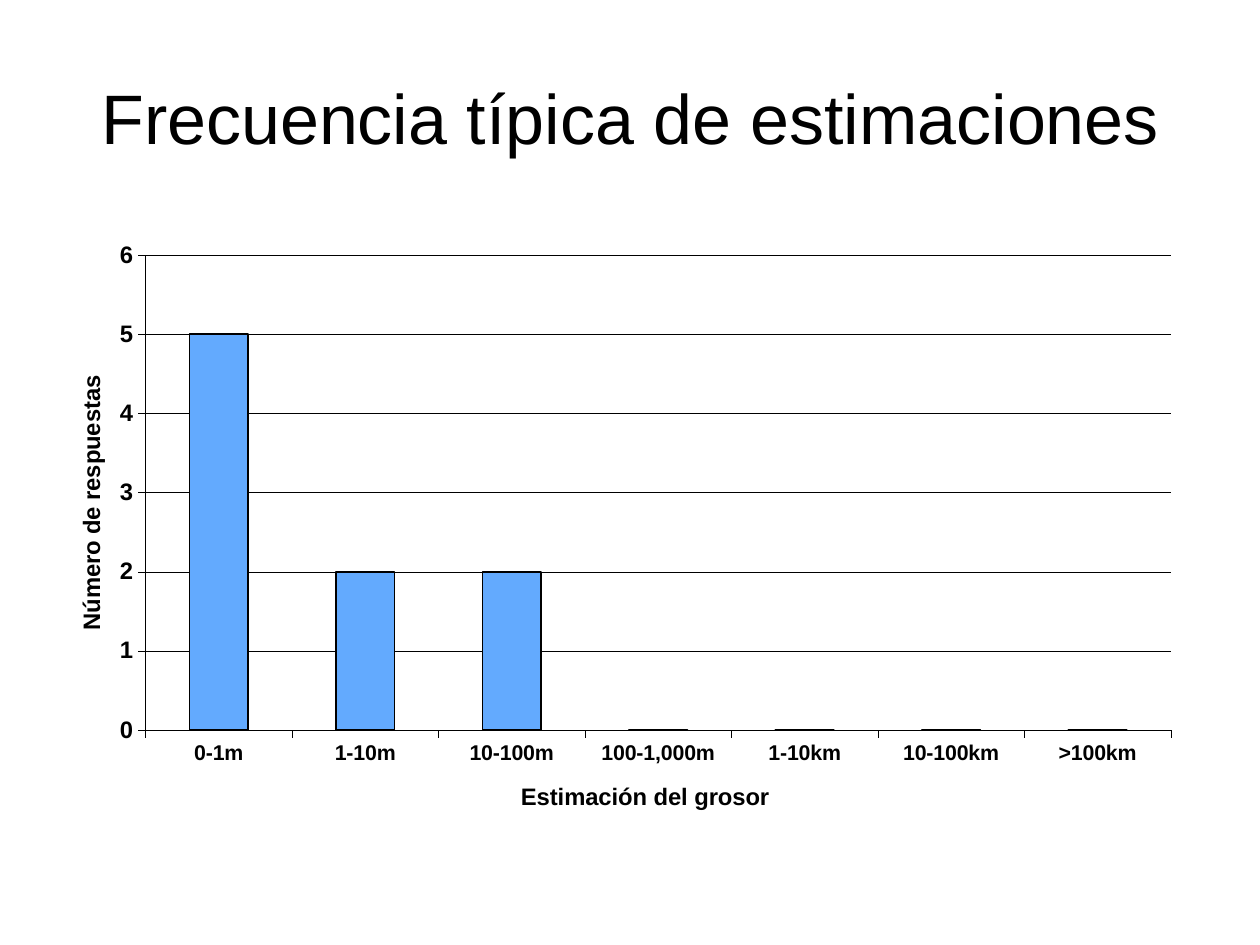
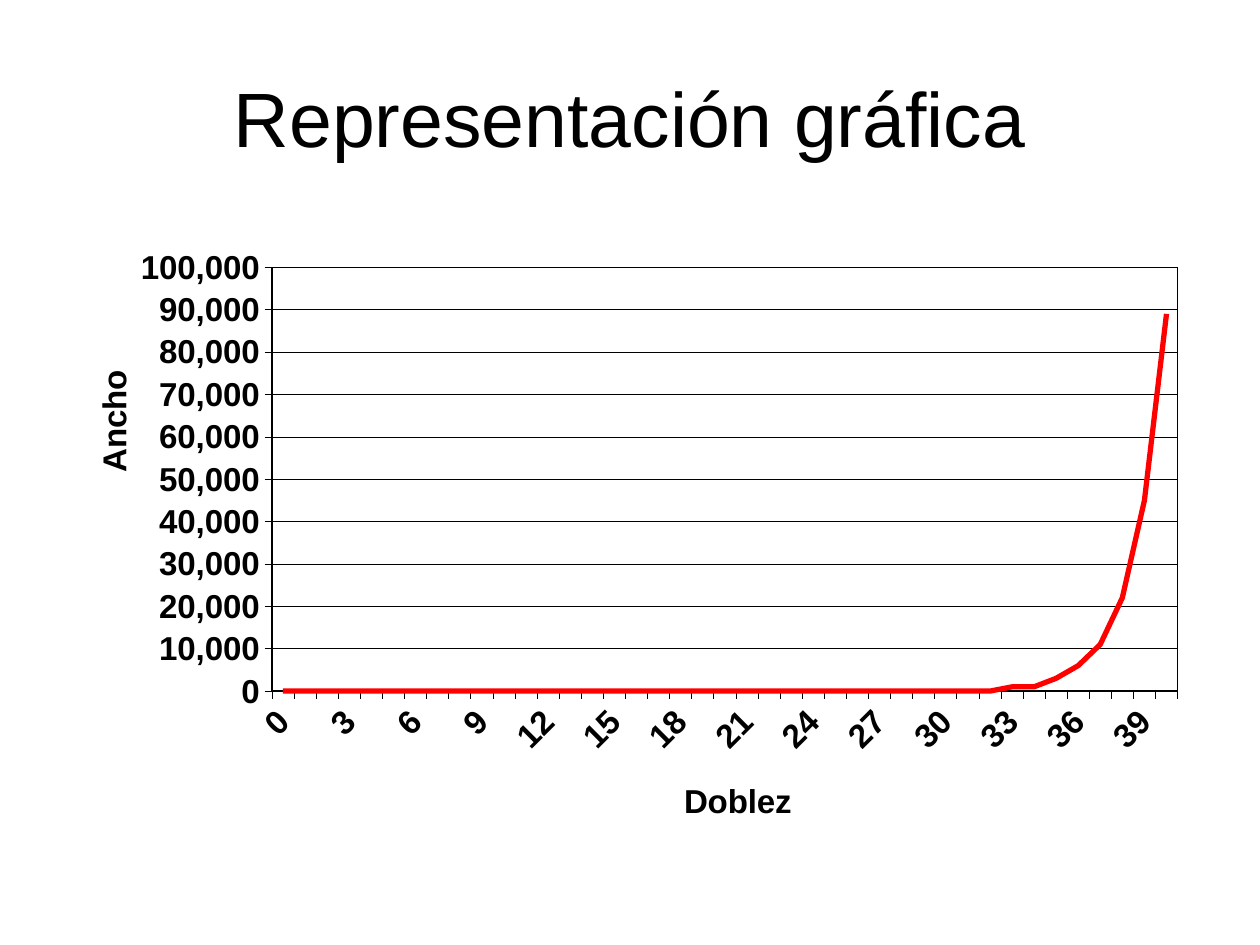
from lxml.etree import SubElement
from pptx import Presentation
from pptx.chart.data import CategoryChartData
from pptx.dml.color import RGBColor
from pptx.enum.chart import XL_CHART_TYPE, XL_TICK_LABEL_POSITION, XL_TICK_MARK
from pptx.enum.text import MSO_ANCHOR, PP_ALIGN
from pptx.oxml import parse_xml
from pptx.oxml.ns import nsdecls, qn
from pptx.util import Pt

FONT = "Arial"
BLACK = "000000"


def paint(target, color, width=None):
    """Colour a font or fill, or a line when a width is given."""
    if width is not None:
        target.width = Pt(width)
        target = target.fill
    if hasattr(target, "solid"):
        target.solid()
        target.fore_color.rgb = RGBColor.from_string(color)
    else:
        target.color.rgb = RGBColor.from_string(color)


def place(parent, **percents):
    """Give a plot area or axis title a manual layout, in percent of the chart."""
    for old in parent.findall(qn("c:layout")):
        parent.remove(old)
    layout = parse_xml(f"<c:layout {nsdecls('c')}><c:manualLayout/></c:layout>")
    manual = layout[0]
    if "w" in percents:
        SubElement(manual, qn("c:layoutTarget"), val="inner")
    for side in "xy":
        SubElement(manual, qn(f"c:{side}Mode"), val="edge")
    for side, percent in percents.items():
        SubElement(manual, qn(f"c:{side}"), val=str(round(percent / 100, 4)))
    parent.insert(0 if parent.find(qn("c:tx")) is None else 1, layout)


# What differs between the two slides
folds = range(41)
slides = [
    dict(
        title="Frecuencia típica de estimaciones", title_size=40,
        kind=XL_CHART_TYPE.COLUMN_CLUSTERED, left=41.04, width=637.92,
        categories=["0-1m", "1-10m", "10-100m", "100-1,000m",
                    "1-10km", "10-100km", ">100km"],
        values=[5, 2, 2, 0, 0, 0, 0],
        plot=dict(x=6.6, y=4.45, w=91.85, h=77.9),
        category_title="Estimación del grosor", category_place=dict(x=39.85, y=90),
        value_title="Número de respuestas", value_place=dict(x=0, y=23.5),
        size=13.6, category_size=12.2, top=6, step=1, number_format="General",
    ),
    dict(
        title="Representación gráfica", title_size=44,
        kind=XL_CHART_TYPE.LINE, left=40.32, width=639.36,
        categories=[str(fold) for fold in folds],
        # The thickness doubles with each fold, to the nearest thousand
        values=[round(89.1 / 2 ** (40 - fold)) * 1000 for fold in folds],
        plot=dict(x=18, y=6.45, w=80.95, h=69.5),
        category_title="Doblez", category_place=dict(x=54.3, y=89.5),
        value_title="Ancho", value_place=dict(x=1.4, y=22.3),
        size=18.9, category_size=18.9, top=100000, step=10000, number_format="#,##0",
    ),
]

deck = Presentation()
deck.slide_width, deck.slide_height = Pt(720), Pt(540)

for content in slides:
    page = deck.slides.add_slide(deck.slide_layouts[6])

    # Title
    box = page.shapes.add_textbox(Pt(36), Pt(21.6), Pt(648), Pt(90))
    frame = box.text_frame
    frame.word_wrap = True
    frame.vertical_anchor = MSO_ANCHOR.MIDDLE
    para = frame.paragraphs[0]
    para.text = content["title"]
    para.alignment = PP_ALIGN.CENTER
    para.font.name, para.font.size = FONT, Pt(content["title_size"])
    paint(para.font, BLACK)

    # Chart
    data = CategoryChartData(number_format=content["number_format"])
    data.categories = content["categories"]
    data.add_series("Series 1", content["values"])
    chart = page.shapes.add_chart(
        content["kind"], Pt(content["left"]), Pt(130.32),
        Pt(content["width"]), Pt(348.48), data).chart
    chart.has_legend = False
    chart.has_title = False
    chart.font.name, chart.font.size = FONT, Pt(content["size"])
    chart.font.bold = True
    paint(chart.font, BLACK)
    plot_area = chart.plots[0]._element.getparent()
    place(plot_area, **content["plot"])

    # Axes
    for axis, role, size in [
        (chart.category_axis, "category", content["category_size"]),
        (chart.value_axis, "value", content["size"]),
    ]:
        axis.major_tick_mark = XL_TICK_MARK.OUTSIDE
        axis.minor_tick_mark = XL_TICK_MARK.NONE
        paint(axis.format.line, BLACK, 0.25)
        title_frame = axis.axis_title.text_frame
        title_frame.text = content[f"{role}_title"]
        place(axis.axis_title._element, **content[f"{role}_place"])
        title_font = title_frame.paragraphs[0].font
        for font, points in [(title_font, content["size"]),
                             (axis.tick_labels.font, size)]:
            font.name, font.size, font.bold = FONT, Pt(points), True
            paint(font, BLACK)

    value_axis = chart.value_axis
    value_axis.minimum_scale, value_axis.maximum_scale = 0, content["top"]
    value_axis.major_unit = content["step"]
    value_axis.tick_labels.number_format = content["number_format"]
    value_axis.tick_labels.number_format_is_linked = False
    value_axis.has_major_gridlines = True
    paint(value_axis.major_gridlines.format.line, BLACK, 0.25)

    # Series
    series = chart.plots[0].series[0]
    if content["kind"] == XL_CHART_TYPE.COLUMN_CLUSTERED:
        chart.plots[0].gap_width = 150
        chart.plots[0].vary_by_categories = False
        chart.category_axis.tick_label_position = XL_TICK_LABEL_POSITION.LOW
        paint(series.format.fill, "63AAFE")
        paint(series.format.line, BLACK, 1)
    else:
        series.smooth = False
        paint(series.format.line, "FF0000", 3)
        # Slanted label for every third fold
        axis_xml = chart.category_axis._element
        axis_xml.find(qn("c:txPr")).find(qn("a:bodyPr")).set("rot", "-2700000")
        skip = parse_xml(f'<c:tickLblSkip {nsdecls("c")} val="3"/>')
        axis_xml.find(qn("c:noMultiLvlLbl")).addprevious(skip)
        # Frame around the plot
        plot_area.append(parse_xml(
            f'<c:spPr {nsdecls("c", "a")}><a:noFill/><a:ln w="{Pt(1)}"><a:solidFill>'
            f'<a:srgbClr val="{BLACK}"/></a:solidFill></a:ln></c:spPr>'))

deck.save("out.pptx")
